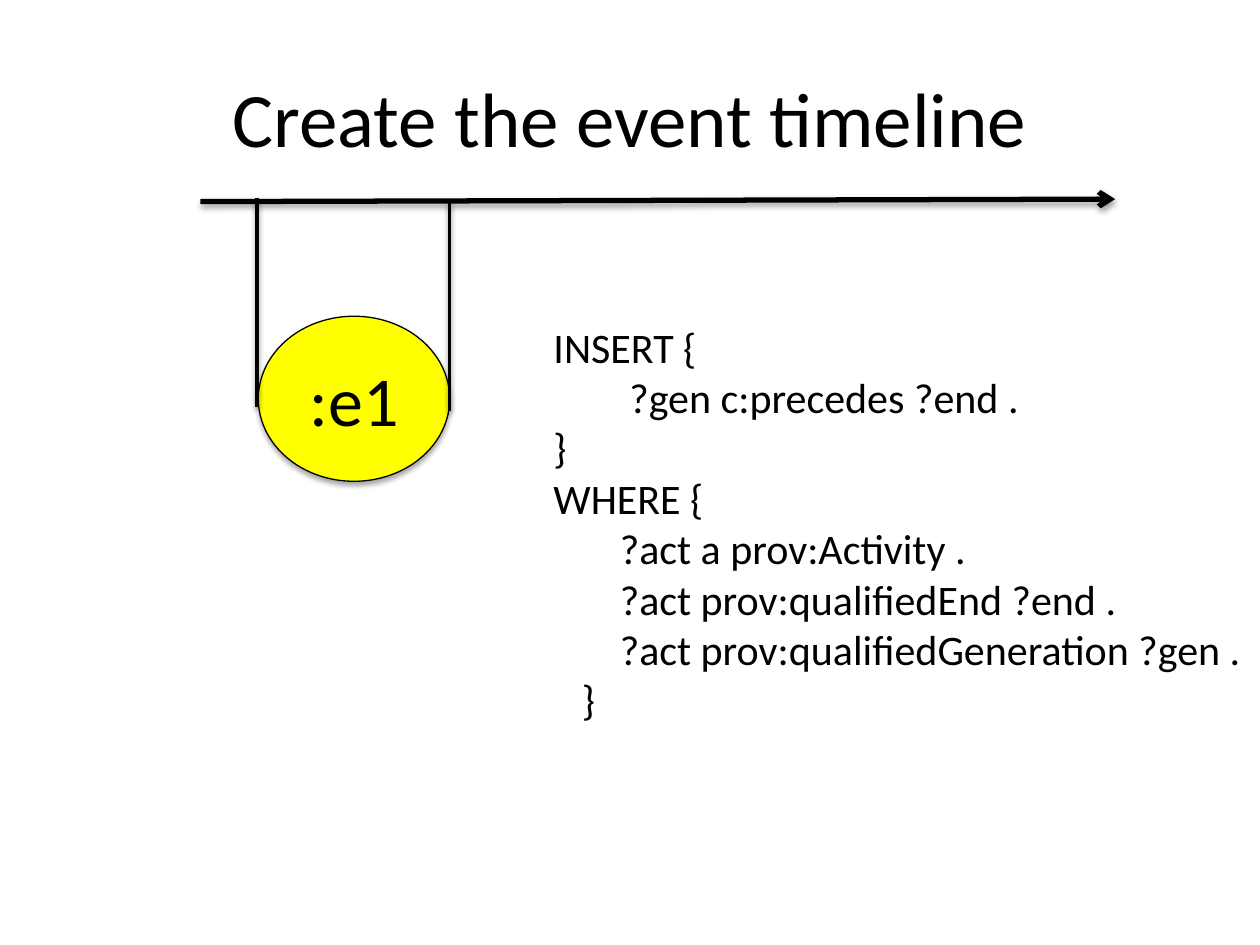
from dataclasses import dataclass

from lxml.etree import SubElement
from pptx import Presentation
from pptx.dml.color import RGBColor
from pptx.enum.shapes import MSO_CONNECTOR, MSO_SHAPE
from pptx.enum.text import MSO_ANCHOR, PP_ALIGN
from pptx.oxml.ns import qn
from pptx.util import Pt

FONT = "Calibri"
BLACK = "000000"
YELLOW = "FFFF00"
INDENT_STEP = 5.42


@dataclass(frozen=True)
class Line:
    start: tuple[float, float]
    end: tuple[float, float]
    width: float
    arrow: bool = False


@dataclass(frozen=True)
class CodeLine:
    indent: int
    text: str


TIMELINE = Line((114.5, 115.2), (637.2, 113.8), 3, arrow=True)
EVENT_BOUNDS = [
    Line((146.9, 113), (146.9, 232.6), 2),
    Line((257, 115.2), (257, 234.7), 2),
]
QUERY = [
    CodeLine(1, "INSERT {"),
    CodeLine(9, "?gen c:precedes ?end ."),
    CodeLine(1, "}"),
    CodeLine(1, "WHERE {"),
    CodeLine(8, "?act a prov:Activity ."),
    CodeLine(8, "?act prov:qualifiedEnd ?end ."),
    CodeLine(8, "?act prov:qualifiedGeneration ?gen ."),
    CodeLine(4, "}"),
]


def color(value: str) -> RGBColor:
    return RGBColor.from_string(value)


def format_text(text_frame, size: float, alignment=PP_ALIGN.LEFT) -> None:
    for paragraph in text_frame.paragraphs:
        paragraph.alignment = alignment
        for run in paragraph.runs:
            run.font.name = FONT
            run.font.size = Pt(size)
            run.font.color.rgb = color(BLACK)


def add_shadow(effects, distance: float, opacity: int) -> None:
    """Fill an effect list with a soft shadow that falls straight down."""
    shadow = SubElement(
        effects, qn("a:outerShdw"), blurRad=str(Pt(3.1)),
        dist=str(Pt(distance)), dir="5400000", rotWithShape="0")
    shade = SubElement(shadow, qn("a:srgbClr"), val=BLACK)
    SubElement(shade, qn("a:alpha"), val=str(opacity * 1000))


def add_line(slide, line: Line) -> None:
    points = [Pt(value) for value in (*line.start, *line.end)]
    connector = slide.shapes.add_connector(MSO_CONNECTOR.STRAIGHT, *points)
    connector.line.color.rgb = color(BLACK)
    connector.line.width = Pt(line.width)
    properties = connector._element.spPr
    if line.arrow:
        SubElement(properties.find(qn("a:ln")), qn("a:tailEnd"), type="arrow")
    add_shadow(SubElement(properties, qn("a:effectLst")), 1.6, 38)


def add_title(slide, text: str) -> None:
    title = slide.shapes.add_textbox(Pt(36), Pt(21.6), Pt(648), Pt(90))
    text_frame = title.text_frame
    text_frame.word_wrap = True
    text_frame.vertical_anchor = MSO_ANCHOR.MIDDLE
    text_frame.text = text
    format_text(text_frame, 44, PP_ALIGN.CENTER)


def add_query(slide, lines: list[CodeLine]) -> None:
    query = slide.shapes.add_textbox(Pt(303.8), Pt(180), Pt(684), Pt(239.8))
    text_frame = query.text_frame
    text_frame.word_wrap = True
    text_frame.text = "\n".join(line.text for line in lines)
    format_text(text_frame, 24)
    for paragraph, line in zip(text_frame.paragraphs, lines):
        margin = Pt(line.indent * INDENT_STEP)
        paragraph._p.get_or_add_pPr().set("marL", str(margin))


def add_event(slide, text: str) -> None:
    event = slide.shapes.add_shape(
        MSO_SHAPE.OVAL, Pt(147.6), Pt(180.7), Pt(109.4), Pt(94.3))
    event.fill.solid()
    event.fill.fore_color.rgb = color(YELLOW)
    event.line.color.rgb = color(BLACK)
    event.line.width = Pt(0.75)
    event.shadow.inherit = False
    add_shadow(event._element.spPr.find(qn("a:effectLst")), 1.8, 35)
    event.text_frame.vertical_anchor = MSO_ANCHOR.MIDDLE
    event.text_frame.text = text
    format_text(event.text_frame, 40, PP_ALIGN.CENTER)


def main() -> None:
    presentation = Presentation()
    presentation.slide_width = Pt(720)
    presentation.slide_height = Pt(540)
    slide = presentation.slides.add_slide(presentation.slide_layouts[6])
    add_title(slide, "Create the event timeline")
    add_query(slide, QUERY)
    add_line(slide, TIMELINE)
    add_event(slide, ":e1")
    for bound in EVENT_BOUNDS:
        add_line(slide, bound)
    presentation.save("out.pptx")


if __name__ == "__main__":
    main()
